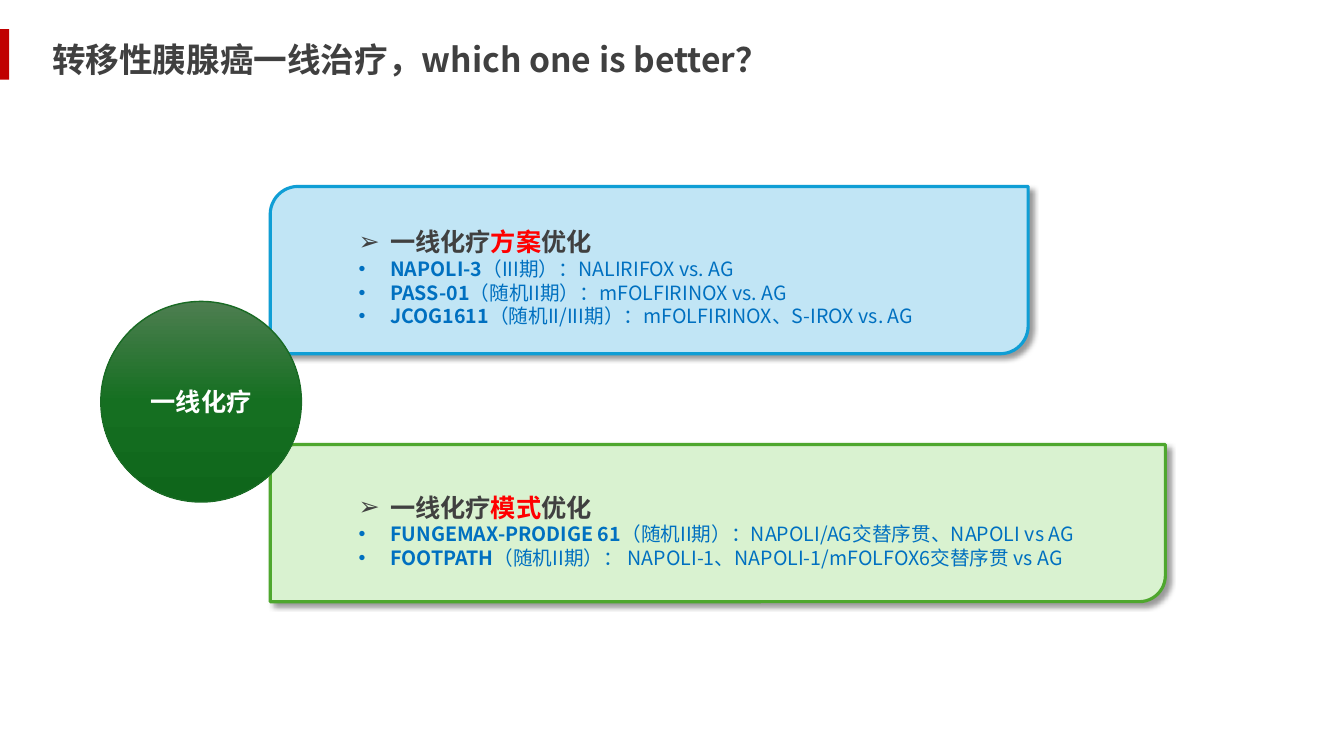
from lxml import etree
from pptx import Presentation
from pptx import util as u
from pptx.dml.color import RGBColor
from pptx.enum import shapes, text
from pptx.oxml import ns

COLORS = {
    "accent": "C00000", "dark": "404040", "red": "FF0000", "body": "0070C0",
    "white": "FFFFFF", "black": "000000",
    "blue_fill": "C1E5F5", "blue_line": "0F9ED5",
    "green_fill": "D9F2D0", "green_line": "4EA72E",
    "circle_line": "196B24", "circle_top": "4D7E50",
    "circle_middle": "156F21", "circle_bottom": "0F661B",
}


def add_element(parent, tag, **attributes):
    return etree.SubElement(parent, ns.qn(tag), attributes)


class SlideBuilder:
    sans = "Noto Sans CJK SC"
    indent = 22.5

    def __init__(self, page):
        self.page = page

    def color(self, name):
        return RGBColor.from_string(COLORS[name])

    def font(self, font, size, color, bold=None, name=sans):
        font.name, font.size, font.bold = name, u.Pt(size), bold
        font.color.rgb = self.color(color)
        latin = font._element.find(ns.qn("a:latin"))
        latin.addnext(latin.makeelement(ns.qn("a:ea"), {"typeface": self.sans}))

    def shape(self, kind, bounds, fill, line=None, width=1):
        shape = self.page.shapes.add_shape(kind, *map(u.Pt, bounds))
        shape.shadow.inherit = False
        shape.fill.solid()
        shape.fill.fore_color.rgb = self.color(fill)
        if line:
            shape.line.color.rgb = self.color(line)
            shape.line.width = u.Pt(width)
        else:
            shape.line.fill.background()
        return shape

    def panel(self, bounds, fill, line):
        panel = self.shape(shapes.MSO_SHAPE.ROUND_2_DIAG_RECTANGLE, bounds, fill, line, 2.25)
        effects = panel._element.spPr.find(ns.qn("a:effectLst"))
        shadow = add_element(effects, "a:outerShdw", blurRad=str(u.Pt(4)), dist=str(u.Pt(3)),
                             dir="2700000", algn="tl", rotWithShape="0")
        tint = add_element(shadow, "a:srgbClr", val=COLORS["black"])
        add_element(tint, "a:alpha", val="40000")

    def circle(self, bounds, label, stops):
        circle = self.shape(shapes.MSO_SHAPE.OVAL, bounds, stops[0], "circle_line")
        solid = circle._element.spPr.find(ns.qn("a:solidFill"))
        gradient = solid.makeelement(ns.qn("a:gradFill"), {"rotWithShape": "1"})
        stop_list = add_element(gradient, "a:gsLst")
        for number, stop in enumerate(stops):
            position = number * 100000 // (len(stops) - 1)
            add_element(add_element(stop_list, "a:gs", pos=str(position)),
                        "a:srgbClr", val=COLORS[stop])
        add_element(gradient, "a:lin", ang="5400000", scaled="0")
        solid.getparent().replace(solid, gradient)
        frame = circle.text_frame
        frame.vertical_anchor = text.MSO_ANCHOR.MIDDLE
        para = frame.paragraphs[0]
        para.text = label
        para.alignment = text.PP_ALIGN.CENTER
        self.font(para.font, 18, "white", True, "Arial")

    def text_box(self, bounds):
        frame = self.page.shapes.add_textbox(*map(u.Pt, bounds)).text_frame
        frame.word_wrap = True
        return frame

    def title(self, bounds, words):
        frame = self.text_box(bounds)
        frame.vertical_anchor = text.MSO_ANCHOR.MIDDLE
        para = frame.paragraphs[0]
        para.text = words
        para.space_after = u.Pt(10.5)
        self.font(para.font, 24, "dark", True)

    def bullet(self, para, mark):
        properties = para._p.get_or_add_pPr()
        properties.set("marL", str(u.Pt(self.indent)))
        properties.set("indent", str(-u.Pt(self.indent)))
        add_element(properties, "a:buFont", typeface="Arial")
        add_element(properties, "a:buChar", char=mark)

    def topic(self, bounds, focus, trials):
        frame = self.text_box(bounds)
        heading = frame.paragraphs[0]
        self.bullet(heading, "➢")
        heading.line_spacing = 1.5
        for words, color in (("一线化疗", "dark"), (focus, "red"), ("优化", "dark")):
            span = heading.add_run()
            span.text = words
            self.font(span.font, 18, color, True)
        for trial, detail in trials:
            para = frame.add_paragraph()
            self.bullet(para, "•")
            for words, bold in ((trial, True), (detail, False)):
                span = para.add_run()
                span.text = words
                span.font.bold = bold
            self.font(para.font, 14, "body")


def main():
    deck = Presentation()
    deck.slide_width, deck.slide_height = u.Pt(960), u.Pt(540)
    slide = SlideBuilder(deck.slides.add_slide(deck.slide_layouts[6]))

    slide.shape(shapes.MSO_SHAPE.RECTANGLE, (0, 20.9, 6.5, 36), "accent")
    slide.panel((193, 317.5, 639.4, 112.3), "green_fill", "green_line")
    slide.panel((193, 133.2, 541.4, 119.5), "blue_fill", "blue_line")
    slide.title((30.2, 24.5, 865.4, 36), "转移性胰腺癌一线治疗，which one is better？")
    slide.topic((249.1, 147.6, 476.6, 90.7), "方案", [
        ("NAPOLI-3", "（III期）：NALIRIFOX vs. AG"),
        ("PASS-01", "（随机II期）：mFOLFIRINOX vs. AG"),
        ("JCOG1611", "（随机II/III期）：mFOLFIRINOX、S-IROX vs. AG"),
    ])
    slide.topic((249.1, 337, 558, 74.2), "模式", [
        ("FUNGEMAX-PRODIGE 61", "（随机II期）：NAPOLI/AG交替序贯、NAPOLI vs AG"),
        ("FOOTPATH", "（随机II期）： NAPOLI-1、NAPOLI-1/mFOLFOX6交替序贯 vs AG"),
    ])
    slide.circle((72, 215.3, 143.3, 143.3), "一线化疗",
                 ("circle_top", "circle_middle", "circle_bottom"))
    deck.save("out.pptx")


if __name__ == "__main__":
    main()
